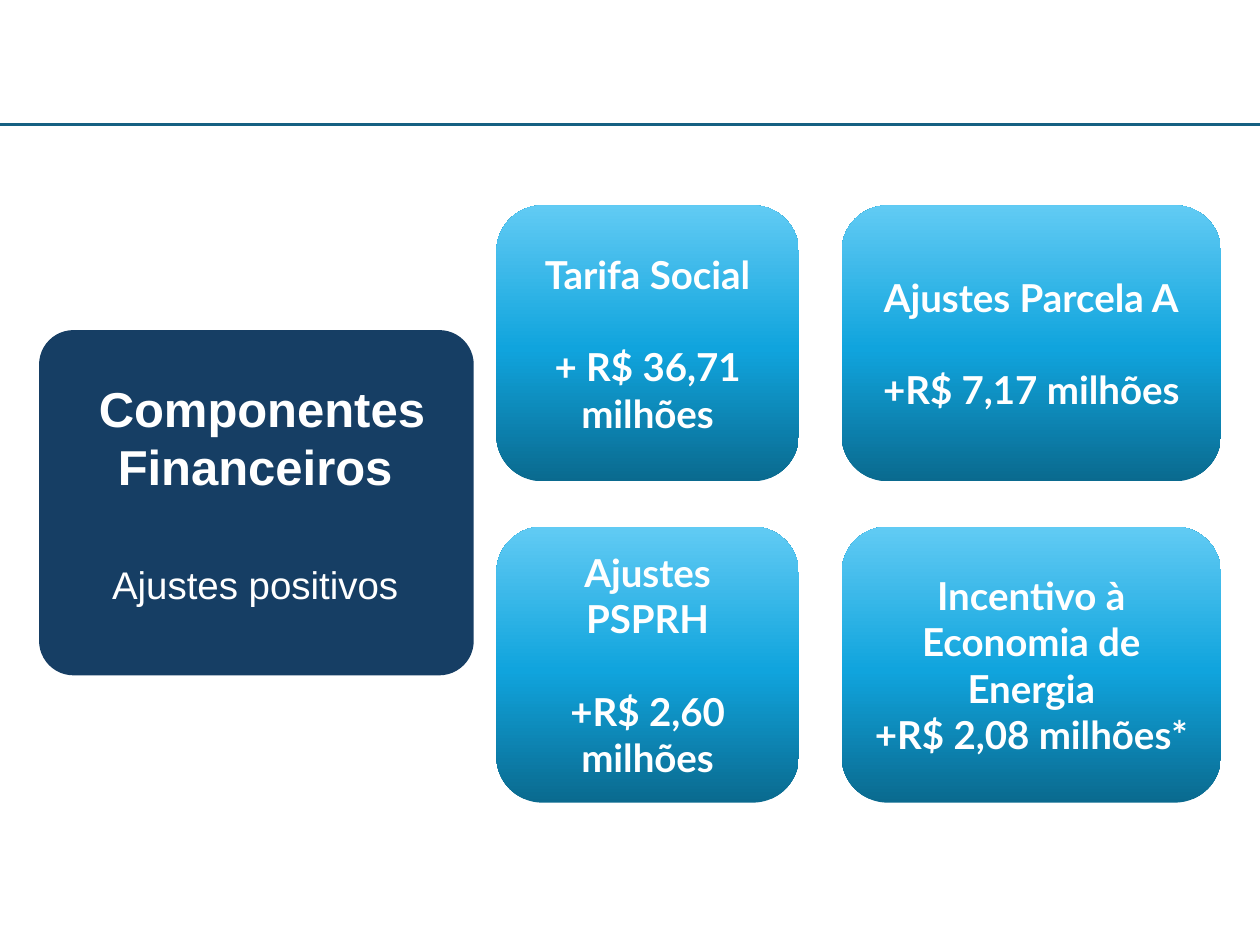
from copy import deepcopy
from dataclasses import dataclass

from pptx import Presentation
from pptx.dml.color import RGBColor
from pptx.enum import shapes, text
from pptx.oxml import ns, xmlchemy
from pptx.util import Inches, Pt


@dataclass(frozen=True)
class Theme:
    rule: str = "156082"
    panel: str = "163E64"
    ink: str = "FFFFFF"
    card_stops: tuple = ((0, "0A6A8F"), (0.48, "10A4DD"), (1, "61CBF4"))
    heading_font: str = "Arial"
    card_font: str = "Lato"
    heading_size: int = 28
    body_size: int = 22
    card_gap: float = 26.4


THEME = Theme()
COLUMNS = ((3.94, 2.4), (6.68, 3.01))
ROWS = (1.63, 4.18)
CARD_HEIGHT = 2.19
CARDS = (
    (("Tarifa Social", "+ R$ 36,71 milhões", THEME.card_gap),
     ("Ajustes Parcela A", "+R$ 7,17 milhões", THEME.card_gap)),
    (("Ajustes PSPRH", "+R$ 2,60 milhões", THEME.card_gap),
     ("Incentivo à Economia de Energia", "+R$ 2,08 milhões*", 0)),
)


def format_paragraph(paragraph, font, size, bold, gap=0):
    paragraph.alignment = text.PP_ALIGN.CENTER
    paragraph.space_before = Pt(gap)
    for run in paragraph.runs:
        run.font.name = font
        run.font.size = Pt(size)
        run.font.bold = bold
        run.font.color.rgb = RGBColor.from_string(THEME.ink)


def add_rounded(slide, left, top, width, height):
    box = slide.shapes.add_shape(
        shapes.MSO_SHAPE.ROUNDED_RECTANGLE,
        Inches(left), Inches(top), Inches(width), Inches(height))
    box.shadow.inherit = False
    box.line.fill.background()
    return box


def add_rule(slide, top):
    rule = slide.shapes.add_connector(
        shapes.MSO_CONNECTOR.STRAIGHT,
        Inches(0), Inches(top), Inches(10), Inches(top))
    rule.line.color.rgb = RGBColor.from_string(THEME.rule)
    rule.line.width = Pt(2)
    rule.element.spPr.append(xmlchemy.OxmlElement("a:effectLst"))


def add_panel(slide):
    panel = add_rounded(slide, 0.31, 2.62, 3.45, 2.74)
    panel.adjustments[0] = 0.1
    panel.fill.solid()
    panel.fill.fore_color.rgb = RGBColor.from_string(THEME.panel)
    slide.shapes.element.insert(2, panel.element)


def fill_placeholder(holder, wording, top, height, size, bold):
    holder.left, holder.width = Inches(0.38), Inches(3.29)
    holder.top, holder.height = Inches(top), Inches(height)
    frame = holder.text_frame
    frame.text = wording
    frame.word_wrap = True
    frame.auto_size = text.MSO_AUTO_SIZE.NONE
    frame.vertical_anchor = text.MSO_ANCHOR.TOP
    format_paragraph(frame.paragraphs[0], THEME.heading_font, size, bold)


def fill_gradient(card):
    card.fill.gradient()
    card.fill.gradient_angle = 90
    stop_list = card.element.spPr.find(".//" + ns.qn("a:gsLst"))
    stop_list.append(deepcopy(stop_list[-1]))
    for stop, (position, color) in zip(card.fill.gradient_stops, THEME.card_stops):
        stop.position = position
        stop.color.rgb = RGBColor.from_string(color)


def add_card(slide, left, top, width, label, amount, gap):
    card = add_rounded(slide, left, top, width, CARD_HEIGHT)
    fill_gradient(card)
    frame = card.text_frame
    frame.text = f"{label}\n{amount}"
    frame.word_wrap = True
    frame.vertical_anchor = text.MSO_ANCHOR.MIDDLE
    for paragraph, space in zip(frame.paragraphs, (0, gap)):
        format_paragraph(paragraph, THEME.card_font, THEME.body_size, True, space)


def main():
    deck = Presentation()
    deck.slide_width, deck.slide_height = Inches(10), Inches(7.5)
    slide = deck.slides.add_slide(deck.slide_layouts[0])
    heading, subtitle = slide.placeholders
    fill_placeholder(heading, " Componentes Financeiros", 2.95, 1.1,
                     THEME.heading_size, True)
    fill_placeholder(subtitle, "Ajustes positivos", 4.4, 0.6,
                     THEME.body_size, False)
    add_panel(slide)
    add_rule(slide, 0.99)
    for top, row in zip(ROWS, CARDS):
        for (left, width), card in zip(COLUMNS, row):
            add_card(slide, left, top, width, *card)
    deck.save("out.pptx")


if __name__ == "__main__":
    main()
